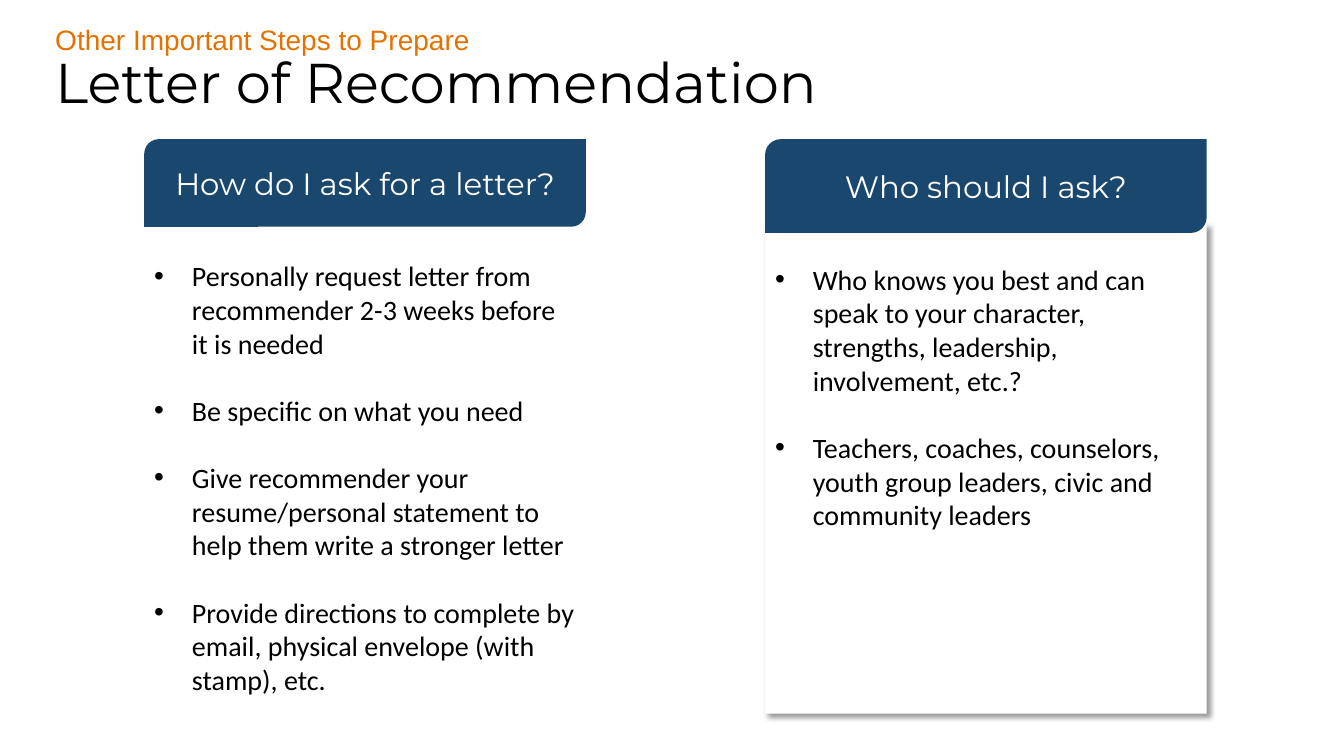
from lxml import etree
from pptx import Presentation
from pptx.dml.color import RGBColor
from pptx.enum.shapes import MSO_SHAPE
from pptx.enum.text import MSO_ANCHOR, PP_ALIGN
from pptx.oxml.ns import qn
from pptx.util import Pt

RECTANGLE = MSO_SHAPE.RECTANGLE
TWO_ROUNDED = MSO_SHAPE.ROUND_2_DIAG_RECTANGLE
TOP, MIDDLE = MSO_ANCHOR.TOP, MSO_ANCHOR.MIDDLE
LEFT, CENTER = PP_ALIGN.LEFT, PP_ALIGN.CENTER

BLACK, WHITE, NAVY, ORANGE = "000000", "FFFFFF", "1A476E", "E57200"
INDENT = 27
LINE_GAP = 24
CARD_WIDTH = 315.4
CARD_TOP = 99.4

ASKING_STEPS = [
    "Personally request letter from recommender 2-3 weeks before it is needed",
    "Be specific on what you need",
    "Give recommender your resume/personal statement to help them write a stronger letter",
    "Provide directions to complete by email, physical envelope (with stamp), etc.",
]
RECOMMENDERS = [
    "Who knows you best and can speak to your character, strengths, leadership, involvement, etc.?",
    "Teachers, coaches, counselors, youth group leaders, civic and community leaders",
]


def color(hex_value):
    return RGBColor.from_string(hex_value)


def style(paragraph, font_name, size, hex_value, align=LEFT):
    paragraph.alignment = align
    font = paragraph.font
    font.name, font.size = font_name, Pt(size)
    font.color.rgb = color(hex_value)


def add_line(slide, box, text, font_name, size, hex_value):
    frame = slide.shapes.add_textbox(*map(Pt, box)).text_frame
    frame.word_wrap = True
    frame.text = text
    style(frame.paragraphs[0], font_name, size, hex_value)


def add_block(slide, preset, box, fill):
    block = slide.shapes.add_shape(preset, *map(Pt, box))
    block.shadow.inherit = False
    block.fill.solid()
    block.fill.fore_color.rgb = color(fill)
    block.line.fill.background()
    block.text_frame.word_wrap = True
    return block


def add_shadow(block):
    effects = block._element.spPr.find(qn("a:effectLst"))
    shadow = etree.SubElement(
        effects, qn("a:outerShdw"), blurRad=str(Pt(4)), dist=str(Pt(3)),
        dir=str(45 * 60000), algn="tl", rotWithShape="0")
    black = etree.SubElement(shadow, qn("a:srgbClr"), val=BLACK)
    etree.SubElement(black, qn("a:alpha"), val="40000")


def add_bullet(paragraph):
    properties = paragraph._p.get_or_add_pPr()
    properties.set("marL", str(Pt(INDENT)))
    properties.set("indent", str(-Pt(INDENT)))
    etree.SubElement(properties, qn("a:buFont"), typeface="Arial")
    etree.SubElement(properties, qn("a:buChar"), char="•")


def add_heading(slide, box):
    left, top, width, height = box
    add_line(slide, (left, top, width, 32),
             "Other Important Steps to Prepare", "Arial", 20, ORANGE)
    add_line(slide, (left, top + 18, width, height - 18),
             "Letter of Recommendation", "Montserrat", 40, BLACK)


def add_card(slide, box, question, answers, header_height, panel_offset,
             first_line, shadowed=False):
    left, top, width, height = box
    panel = add_block(slide, RECTANGLE,
                      (left, top + panel_offset, width, height - panel_offset), WHITE)
    if shadowed:
        add_shadow(panel)
    frame = panel.text_frame
    frame.vertical_anchor = TOP
    frame.margin_top = Pt(first_line - panel_offset)
    frame.text = "\n".join(answers)
    for index, paragraph in enumerate(frame.paragraphs):
        add_bullet(paragraph)
        style(paragraph, "Calibri", 20, BLACK)
        if index:
            paragraph.space_before = Pt(LINE_GAP)

    header = add_block(slide, TWO_ROUNDED, (left, top, width, header_height), NAVY)
    header.text_frame.vertical_anchor = MIDDLE
    header.text_frame.text = question
    style(header.text_frame.paragraphs[0], "Montserrat", 22, WHITE, CENTER)


def main():
    presentation = Presentation()
    presentation.slide_width, presentation.slide_height = Pt(960), Pt(540)
    slide = presentation.slides.add_slide(presentation.slide_layouts[6])
    add_heading(slide, (32.4, 12.2, 839.5, 73.4))
    add_card(slide, (103, CARD_TOP, CARD_WIDTH, 406.8),
             "How do I ask for a letter?", ASKING_STEPS,
             header_height=62.6, panel_offset=52.6, first_line=85.5)
    add_card(slide, (546.5, CARD_TOP, CARD_WIDTH, 410.4),
             "Who should I ask?", RECOMMENDERS,
             header_height=67, panel_offset=60.5, first_line=88, shadowed=True)
    presentation.save("out.pptx")


if __name__ == "__main__":
    main()
